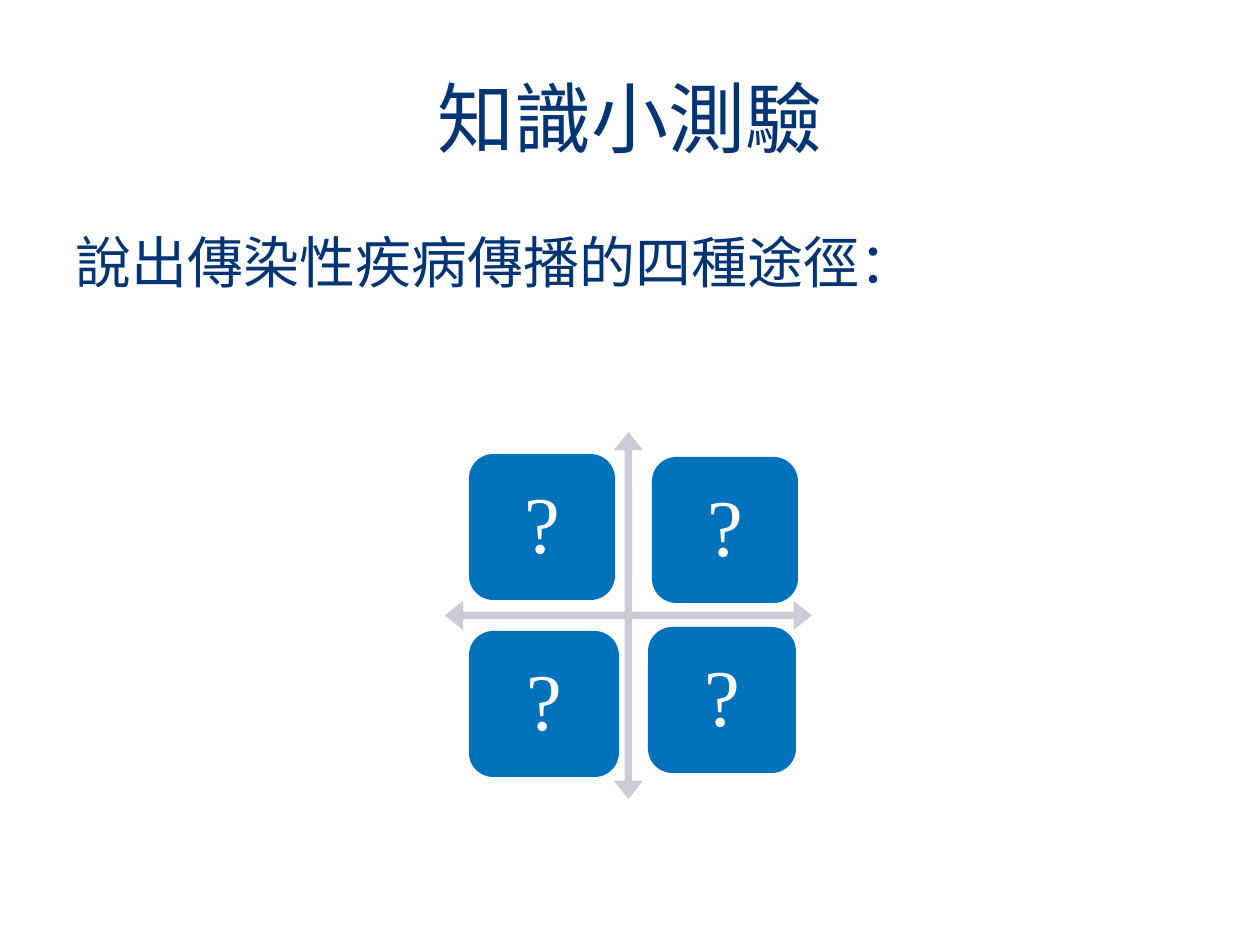
from dataclasses import dataclass

from pptx import Presentation
from pptx.dml.color import RGBColor
from pptx.enum.shapes import MSO_SHAPE
from pptx.enum.text import MSO_ANCHOR, PP_ALIGN
from pptx.util import Emu, Pt

EMU_PER_PX = 914400 // 126
QUAD_ARROW = MSO_SHAPE.QUAD_ARROW
ROUNDED = MSO_SHAPE.ROUNDED_RECTANGLE
TOP, MIDDLE = MSO_ANCHOR.TOP, MSO_ANCHOR.MIDDLE
LEFT, CENTER = PP_ALIGN.LEFT, PP_ALIGN.CENTER


@dataclass(frozen=True)
class Theme:
    navy: str = "003473"
    blue: str = "0072BC"
    grey: str = "CCCCD9"
    white: str = "FFFFFF"
    sans: str = "Arial"
    serif: str = "Times New Roman"
    title_size: int = 44
    question_size: int = 32
    mark_size: int = 46


THEME = Theme()


def px(length):
    return Emu(length * EMU_PER_PX)


def write(shape, text, font_name, size, color, align, anchor):
    frame = shape.text_frame
    frame.word_wrap = True
    frame.vertical_anchor = anchor
    paragraph = frame.paragraphs[0]
    paragraph.text = text
    paragraph.alignment = align
    font = paragraph.runs[0].font
    font.name = font_name
    font.size = Pt(size)
    font.color.rgb = RGBColor.from_string(color)


def add_text(slide, box, *style):
    write(slide.shapes.add_textbox(*map(px, box)), *style)


def add_solid(slide, preset, box, color):
    solid = slide.shapes.add_shape(preset, *map(px, box))
    solid.shadow.inherit = False
    solid.fill.solid()
    solid.fill.fore_color.rgb = RGBColor.from_string(color)
    solid.line.fill.background()
    return solid


def add_axes(slide, box):
    axes = add_solid(slide, QUAD_ARROW, box, THEME.grey)
    for index, ratio in enumerate((0.02, 0.04, 0.05)):
        axes.adjustments[index] = ratio


def add_route_tile(slide, box):
    tile = add_solid(slide, ROUNDED, box, THEME.blue)
    write(tile, "?", THEME.serif, THEME.mark_size, THEME.white, CENTER, MIDDLE)
    frame = tile.text_frame
    frame.margin_left = frame.margin_right = px(24)
    frame.margin_top = frame.margin_bottom = px(24)
    frame.paragraphs[0].line_spacing = 0.9


def main():
    deck = Presentation()
    deck.slide_width, deck.slide_height = px(1260), px(945)
    slide = deck.slides.add_slide(deck.slide_layouts[6])

    add_text(slide, (63, 38, 1134, 157), "知識小測驗",
             THEME.sans, THEME.title_size, THEME.navy, CENTER, MIDDLE)
    add_text(slide, (63, 221, 1134, 623), "說出傳染性疾病傳播的四種途徑：",
             THEME.serif, THEME.question_size, THEME.navy, LEFT, TOP)

    add_axes(slide, (445, 432, 367, 367))
    for left, top, width in ((469, 454, 146), (652, 457, 146),
                             (469, 631, 150), (648, 627, 148)):
        add_route_tile(slide, (left, top, width, 146))

    deck.save("out.pptx")


if __name__ == "__main__":
    main()
